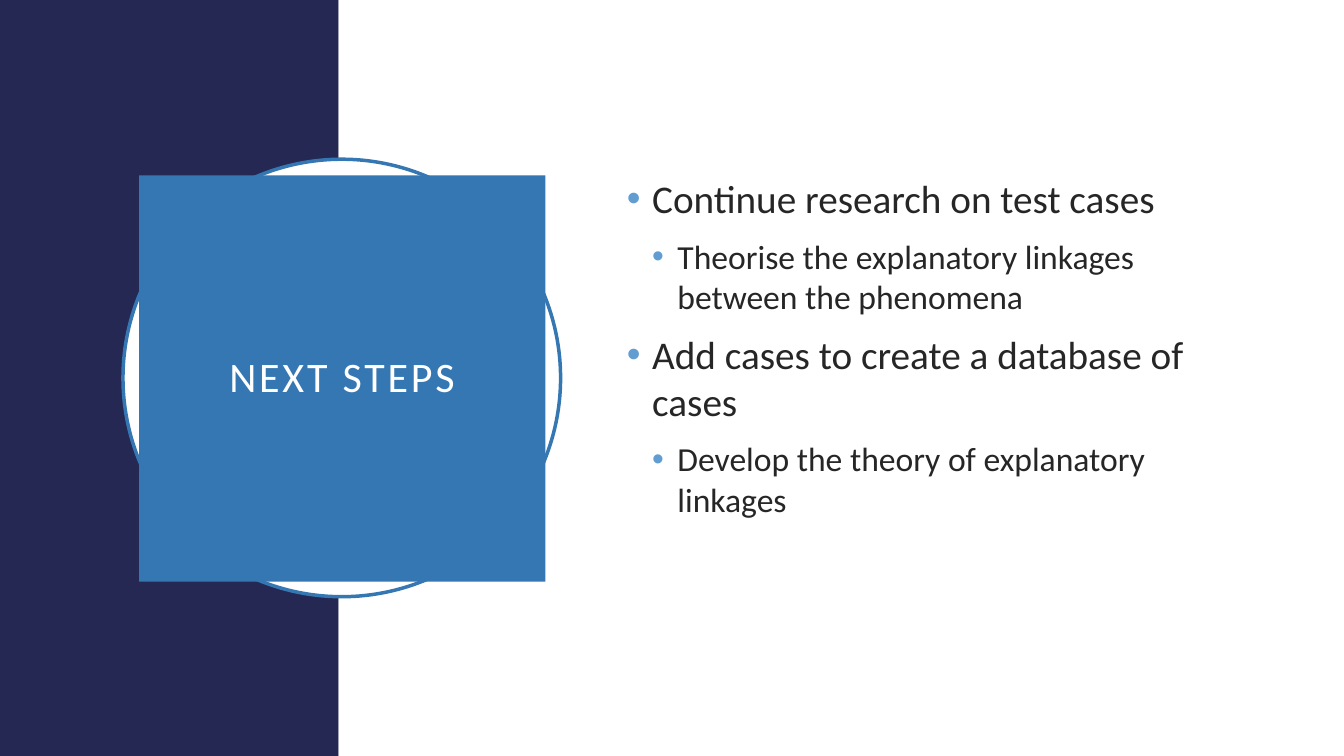
from dataclasses import dataclass

from lxml.etree import SubElement
from pptx import Presentation
from pptx.dml.color import RGBColor
from pptx.enum.shapes import MSO_SHAPE
from pptx.enum.text import MSO_ANCHOR, PP_ALIGN
from pptx.oxml.ns import qn
from pptx.util import Emu, Pt

PX = 9144


@dataclass(frozen=True)
class Theme:
    navy: str = "242852"
    blue: str = "3477B2"
    bullet: str = "629DD1"
    ink: str = "262626"
    white: str = "FFFFFF"
    font: str = "Calibri"
    title: int = 30
    levels: tuple = (28, 24)
    ring: float = 2.5


THEME = Theme()

STEPS = [
    (0, "Continue research on test cases"),
    (1, "Theorise the explanatory linkages between the phenomena"),
    (0, "Add cases to create a database of cases"),
    (1, "Develop the theory of explanatory linkages"),
]


def px(n):
    return Emu(n * PX)


def apply(obj, values):
    for name, value in values.items():
        setattr(obj, name, value)


def add_panel(s, kind, box, fill, line=None):
    sp = s.shapes.add_shape(kind, *map(px, box))
    sp.shadow.inherit = False
    sp.fill.solid()
    sp.fill.fore_color.rgb = RGBColor.from_string(fill)
    if line:
        sp.line.color.rgb = RGBColor.from_string(line)
        sp.line.width = Pt(THEME.ring)
    else:
        sp.line.fill.background()
    return sp


def set_frame(tf, left, top, right, bottom):
    apply(tf, {
        "word_wrap": True,
        "vertical_anchor": MSO_ANCHOR.MIDDLE,
        "margin_left": px(left),
        "margin_top": px(top),
        "margin_right": px(right),
        "margin_bottom": px(bottom),
    })


def add_run(p, text, size, color):
    r = p.add_run()
    r.text = text
    apply(r.font, {"name": THEME.font, "size": Pt(size)})
    r.font.color.rgb = RGBColor.from_string(color)
    return r


def set_bullet(p, level):
    pPr = p._p.get_or_add_pPr()
    pPr.set("marL", str(px(25 * (level + 1))))
    pPr.set("indent", str(px(-25)))
    color = SubElement(pPr, qn("a:buClr"))
    SubElement(color, qn("a:srgbClr"), val=THEME.bullet)
    SubElement(pPr, qn("a:buFont"), typeface="Arial")
    SubElement(pPr, qn("a:buChar"), char="•")


def add_backdrop(s, box, split):
    x, y, w, h = box
    add_panel(s, MSO_SHAPE.RECTANGLE, (x, y, split, h), THEME.navy)
    add_panel(s, MSO_SHAPE.RECTANGLE, (x + split, y, w - split, h), THEME.white)


def add_title(s, box, text):
    x, y, w, h = box
    gap = 16
    add_panel(s, MSO_SHAPE.OVAL, box, THEME.white, THEME.blue)
    inner = (x + gap, y + gap, w - 2 * gap + 1, h - 2 * gap + 1)
    sp = add_panel(s, MSO_SHAPE.RECTANGLE, inner, THEME.blue)
    tf = sp.text_frame
    set_frame(tf, 20, 20, 20, 20)
    p = tf.paragraphs[0]
    apply(p, {"alignment": PP_ALIGN.CENTER, "line_spacing": 0.9})
    r = add_run(p, text, THEME.title, THEME.white)
    r.font._element.set("spc", "200")


def add_steps(s, box, steps):
    tf = s.shapes.add_textbox(*map(px, box)).text_frame
    set_frame(tf, 10, 5, 10, 66)
    for i, (level, text) in enumerate(steps):
        p = tf.add_paragraph() if i else tf.paragraphs[0]
        apply(p, {"level": level, "space_before": Pt(10),
                  "alignment": PP_ALIGN.LEFT})
        set_bullet(p, level)
        add_run(p, text, THEME.levels[level], THEME.ink)


def main():
    prs = Presentation()
    apply(prs, {"slide_width": px(1333), "slide_height": px(750)})
    s = prs.slides.add_slide(prs.slide_layouts[6])
    add_backdrop(s, (0, 0, 1333, 750), 336)
    add_title(s, (122, 158, 434, 434), "NEXT STEPS")
    add_steps(s, (612, 153, 582, 443), STEPS)
    prs.save("out.pptx")


if __name__ == "__main__":
    main()
